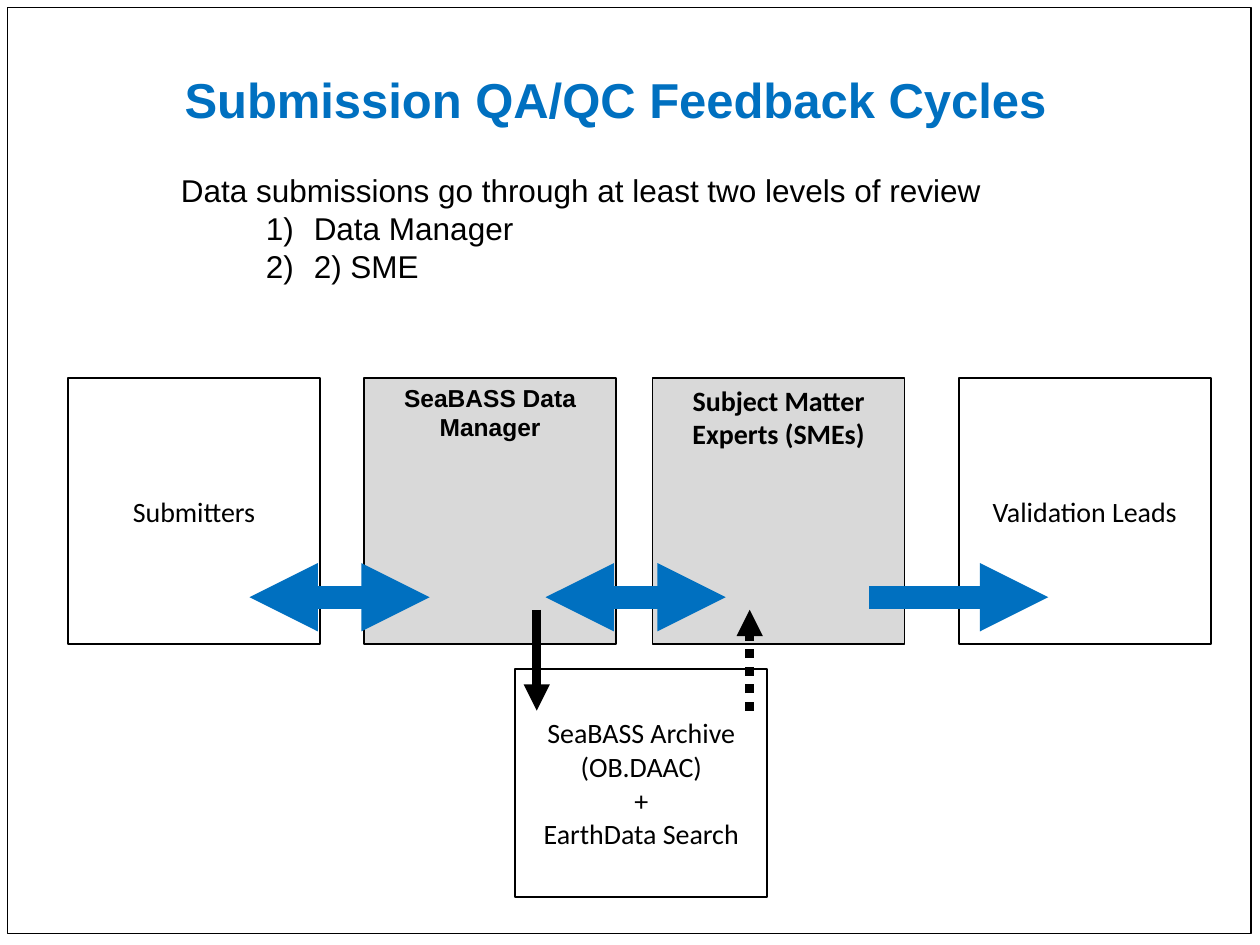
"""Build the slide on submission QA/QC feedback cycles."""
from dataclasses import dataclass
from typing import Optional

from lxml.etree import SubElement
from pptx import Presentation
from pptx.dml.color import RGBColor
from pptx.enum.dml import MSO_LINE
from pptx.enum.shapes import MSO_CONNECTOR, MSO_SHAPE
from pptx.enum.text import MSO_ANCHOR as Anchor, MSO_AUTO_SIZE, PP_ALIGN as Align
from pptx.oxml.ns import qn
from pptx.util import Inches, Pt


@dataclass(frozen=True)
class Theme:
    accent: str = "0070C0"
    ink: str = "000000"
    paper: str = "FFFFFF"
    review: str = "D9D9D9"
    sans: str = "Arial"
    label: str = "Calibri"
    title_size: int = 28
    body_size: int = 18
    label_size: int = 16
    small_size: int = 14
    frame_line: float = 0.75
    box_line: float = 1
    flow_line: float = 13
    archive_line: float = 5


THEME = Theme()
CELL = 0.1


@dataclass(frozen=True)
class Stage:
    lines: tuple[str, ...]
    column: float
    row: float = 30
    rows: float = 21.1
    fill: str = THEME.paper
    anchor: Anchor = Anchor.MIDDLE
    font: str = THEME.label
    size: int = THEME.label_size
    bold: bool = False


@dataclass(frozen=True)
class Flow:
    start: tuple[float, float]
    end: tuple[float, float]
    color: str = THEME.accent
    width: float = THEME.flow_line
    both_ways: bool = False
    dotted: bool = False


STAGE_COLUMNS = 20
FLOW_ROW = 47.4
ARCHIVE_ROWS = (48.4, 56.4)
STAGES = (
    Stage(("Submitters",), 5.4),
    Stage(("SeaBASS Archive", "(OB.DAAC)", "+", "EarthData Search"), 40.9, row=53.1, rows=18.1),
    Stage(("Subject Matter Experts (SMEs)",), 51.8, fill=THEME.review, anchor=Anchor.TOP, bold=True),
    Stage(("SeaBASS Data Manager",), 28.9, fill=THEME.review, anchor=Anchor.TOP,
          font=THEME.sans, size=THEME.small_size, bold=True),
    Stage(("Validation Leads",), 76.1),
)
FLOWS = (
    Flow((43.3, FLOW_ROW), (57.6, FLOW_ROW), both_ways=True),
    Flow((19.8, FLOW_ROW), (34.1, FLOW_ROW), both_ways=True),
    Flow((42.6, ARCHIVE_ROWS[0]), (42.6, ARCHIVE_ROWS[1]), THEME.ink, THEME.archive_line),
    Flow((59.5, ARCHIVE_ROWS[1]), (59.5, ARCHIVE_ROWS[0]), THEME.ink, THEME.archive_line, dotted=True),
    Flow((69, FLOW_ROW), (83.2, FLOW_ROW)),
)


def grid(cells: float) -> int:
    """Turn a count of grid cells into a length."""
    return Inches(round(cells * CELL, 2))


def write(shape, lines: tuple[str, ...], *, size: int, font: str = THEME.sans,
          color: str = THEME.ink, bold: bool = False, anchor: Anchor = Anchor.TOP,
          numbered_from: Optional[int] = None) -> None:
    """Fill a shape with centred lines, numbering those from a given index on."""
    frame = shape.text_frame
    frame.word_wrap = True
    frame.auto_size = MSO_AUTO_SIZE.NONE
    frame.vertical_anchor = anchor
    frame.margin_left = frame.margin_right = Inches(0.07)
    frame.margin_top = frame.margin_bottom = Inches(0.04)
    for index, line in enumerate(lines):
        paragraph = frame.paragraphs[0] if index == 0 else frame.add_paragraph()
        numbered = numbered_from is not None and index >= numbered_from
        paragraph.alignment = Align.LEFT if numbered else Align.CENTER
        paragraph.space_before = Pt(0)
        properties = paragraph._p.get_or_add_pPr()
        if numbered:
            paragraph.level = 3
            properties.set("marL", str(Inches(1.88)))
            properties.set("indent", str(Inches(-0.38)))
            SubElement(properties, qn("a:buFont"), typeface=THEME.sans)
            SubElement(properties, qn("a:buAutoNum"), type="arabicParenR")
        else:
            properties.set("marL", "0")
            properties.set("indent", "0")
            SubElement(properties, qn("a:buNone"))
        run = paragraph.add_run()
        run.text = line
        run.font.name, run.font.size, run.font.bold = font, Pt(size), bold
        run.font.color.rgb = RGBColor.from_string(color)


def place(shape, column: float, row: float, columns: float, rows: float) -> None:
    """Move and size a placeholder on the grid."""
    shape.left, shape.top = grid(column), grid(row)
    shape.width, shape.height = grid(columns), grid(rows)


def add_box(slide, column: float, row: float, columns: float, rows: float, *,
            line: float, fill: Optional[str] = None):
    """Add an outlined rectangle, unfilled unless a colour is given."""
    box = slide.shapes.add_shape(MSO_SHAPE.RECTANGLE, grid(column), grid(row), grid(columns), grid(rows))
    box.shadow.inherit = False
    if fill:
        box.fill.solid()
        box.fill.fore_color.rgb = RGBColor.from_string(fill)
    else:
        box.fill.background()
    box.line.color.rgb = RGBColor.from_string(THEME.ink)
    box.line.width = Pt(line)
    return box


def add_stage(slide, stage: Stage) -> None:
    """Add one labelled stage of the review."""
    box = add_box(slide, stage.column, stage.row, STAGE_COLUMNS, stage.rows,
                  line=THEME.box_line, fill=stage.fill)
    write(box, stage.lines, size=stage.size, font=stage.font, bold=stage.bold, anchor=stage.anchor)


def add_flow(slide, flow: Flow) -> None:
    """Add an arrow between two stages."""
    arrow = slide.shapes.add_connector(MSO_CONNECTOR.STRAIGHT, *map(grid, flow.start + flow.end))
    arrow.line.color.rgb = RGBColor.from_string(flow.color)
    arrow.line.width = Pt(flow.width)
    if flow.dotted:
        arrow.line.dash_style = MSO_LINE.ROUND_DOT
    outline = arrow.line._get_or_add_ln()
    for tag in ("a:headEnd", "a:tailEnd") if flow.both_ways else ("a:tailEnd",):
        SubElement(outline, qn(tag), type="triangle")
    SubElement(arrow._element.spPr, qn("a:effectLst"))


def main() -> None:
    """Build and save the slide."""
    deck = Presentation()
    deck.slide_width, deck.slide_height = Inches(10), Inches(7.5)
    slide = deck.slides.add_slide(deck.slide_layouts[1])
    title, review_levels = slide.placeholders
    add_box(slide, 0.6, 0.6, 98.7, 73.5, line=THEME.frame_line)
    place(title, 12.4, 5.1, 72.9, 5.9)
    write(title, ("Submission QA/QC Feedback Cycles",), size=THEME.title_size,
          color=THEME.accent, bold=True)
    place(review_levels, 5.4, 13.2, 81.4, 14.4)
    write(review_levels, ("Data submissions go through at least two levels of review",
                          "Data Manager", "2) SME"), size=THEME.body_size, numbered_from=1)
    for stage in STAGES:
        add_stage(slide, stage)
    for flow in FLOWS:
        add_flow(slide, flow)
    deck.save("out.pptx")


if __name__ == "__main__":
    main()
